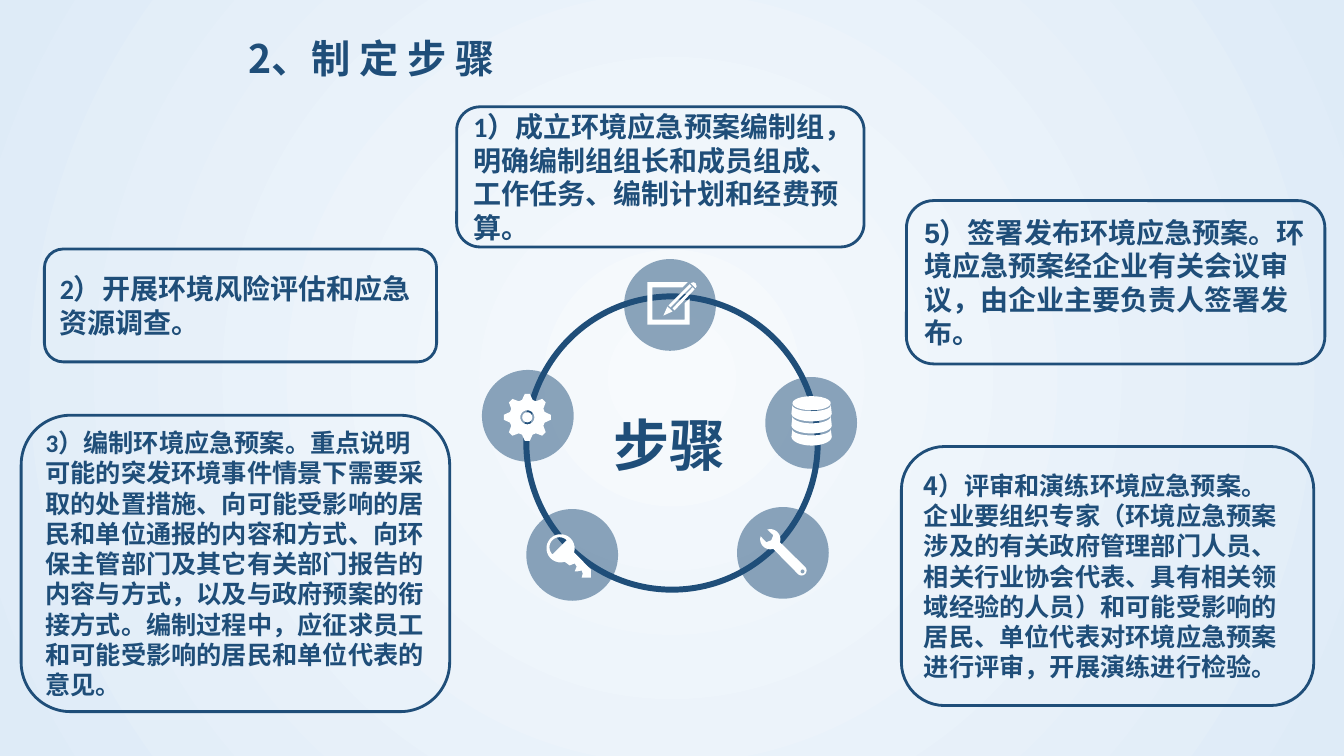
from dataclasses import dataclass
from math import cos, radians, sin

from lxml import etree
from pptx import Presentation
from pptx.dml.color import RGBColor
from pptx.enum.shapes import MSO_SHAPE as Preset
from pptx.enum.text import MSO_ANCHOR as Anchor, MSO_AUTO_SIZE as AutoSize, PP_ALIGN as Align
from pptx.oxml.ns import qn
from pptx.util import Inches, Pt

Point = tuple[float, float]
Contour = list[Point]

NAVY = "1F4E79"
ICON_WHITE = "FEFFFF"
CJK = "Noto Sans CJK SC"
DISC_SIZE = 0.91


@dataclass
class Step:
    text: str
    left: float
    top: float
    width: float
    height: float
    size: int
    font: str


@dataclass
class Badge:
    left: float
    top: float
    outlines: list[list[Contour]]


def arc(cx: float, cy: float, rx: float, ry: float, start: float, end: float) -> Contour:
    count = 24
    angles = [radians(start + (end - start) * i / count) for i in range(count + 1)]
    return [(cx + rx * cos(a), cy + ry * sin(a)) for a in angles]


def circle(cx: float, cy: float, radius: float) -> Contour:
    return arc(cx, cy, radius, radius, 0, 360)


def gear(cx: float, cy: float) -> Contour:
    tooth = [(0.18, -17), (0.235, -6), (0.235, 6), (0.18, 17)]
    return [
        (cx + r * cos(radians(turn + a)), cy + r * sin(radians(turn + a)))
        for turn in range(0, 360, 45)
        for r, a in tooth
    ]


def disk_layer(upper: float, lower: float, sag: float, depth: float) -> Contour:
    return arc(8.05, upper, 0.19, sag, 180, 0) + arc(8.05, lower, 0.2, depth, 0, 180)


PENCIL = [
    [[(6.67, 3.09), (6.62, 3.04), (6.58, 3.13)]],
    [[(6.84, 2.82), (6.63, 3.03), (6.65, 3.05), (6.86, 2.84)]],
    [[(6.67, 3.06), (6.69, 3.08), (6.89, 2.87), (6.87, 2.85)]],
    [[(6.85, 2.81), (6.88, 2.8), (6.9, 2.81), (6.91, 2.84), (6.9, 2.86)]],
    [[(6.79, 3.17), (6.47, 3.17), (6.47, 2.85), (6.77, 2.85), (6.82, 2.8), (6.42, 2.8),
      (6.42, 3.22), (6.84, 3.22), (6.84, 2.96), (6.79, 3.01)]],
]
GEAR = [[gear(5.23, 4.14), circle(5.23, 4.14, 0.07)], [circle(5.23, 4.14, 0.05)]]
DATABASE = [[
    disk_layer(4.26, 4.33, 0.06, 0.09),
    disk_layer(4.13, 4.22, 0.07, 0.08),
    disk_layer(4.02, 4.1, 0.06, 0.08),
    arc(8.05, 4, 0.19, 0.07, 0, 360),
]]
KEY = [[
    arc(5.56, 5.44, 0.14, 0.14, 73, 377)
    + [(5.86, 5.65), (5.86, 5.73), (5.77, 5.73), (5.78, 5.69), (5.77, 5.66), (5.72, 5.67),
       (5.7, 5.67), (5.72, 5.62), (5.7, 5.59), (5.65, 5.61)],
    arc(5.55, 5.43, 0.1, 0.1, 135, 315),
]]
WRENCH = [[
    arc(7.64, 5.35, 0.1, 0.1, 17, -107)
    + [(7.67, 5.31), (7.65, 5.36), (7.6, 5.38)]
    + arc(7.64, 5.35, 0.1, 0.1, 197, 73)
    + arc(7.95, 5.66, 0.05, 0.05, 135, -45),
    circle(7.96, 5.67, 0.02),
]]

BADGES = [
    Badge(6.19, 2.57, PENCIL),
    Badge(4.78, 3.67, GEAR),
    Badge(7.59, 3.74, DATABASE),
    Badge(5.22, 5.05, KEY),
    Badge(7.31, 5.03, WRENCH),
]

STEPS = [
    Step("4）评审和演练环境应急预案。企业要组织专家（环境应急预案涉及的有关政府管理部门人员、"
         "相关行业协会代表、具有相关领域经验的人员）和可能受影响的居民、单位代表对环境应急预案"
         "进行评审，开展演练进行检验。", 8.94, 4.43, 4.09, 2.57, 18, CJK),
    Step("5）签署发布环境应急预案。环境应急预案经企业有关会议审议，由企业主要负责人签署发布。",
         8.99, 1.99, 4.15, 1.62, 20, "Arial"),
    Step("3）编制环境应急预案。重点说明可能的突发环境事件情景下需要采取的处置措施、向可能受影响的"
         "居民和单位通报的内容和方式、向环保主管部门及其它有关部门报告的内容与方式，以及与政府预案的"
         "衔接方式。编制过程中，应征求员工和可能受影响的居民和单位代表的意见。",
         0.21, 4.12, 4.25, 2.94, 18, "Calibri"),
    Step("2）开展环境风险评估和应急资源调查。", 0.44, 2.47, 3.89, 1.12, 20, "Calibri"),
    Step("1）成立环境应急预案编制组，明确编制组组长和成员组成、工作任务、编制计划和经费预算。",
         4.53, 1.06, 4.04, 1.39, 20, "Calibri"),
]


def color(value: str) -> RGBColor:
    return RGBColor.from_string(value)


def paint_background(slide) -> None:
    fill = slide.background.fill
    fill.gradient()
    for stop, position, tone in zip(fill.gradient_stops, (0, 1), ("F7FAFD", "DEEBF7")):
        stop.position = position
        stop.color.rgb = color(tone)
    linear = slide.background._cSld.find(".//" + qn("a:lin"))
    radial = etree.Element(qn("a:path"), {"path": "circle"})
    etree.SubElement(radial, qn("a:fillToRect"), {side: "50000" for side in "ltrb"})
    linear.getparent().replace(linear, radial)


def write(shape, text: str, size: int, font: str) -> None:
    frame = shape.text_frame
    frame.word_wrap = True
    paragraph = frame.paragraphs[0]
    paragraph.text = text
    paragraph.alignment = Align.LEFT
    paragraph.font.size = Pt(size)
    paragraph.font.name = font
    paragraph.font.bold = True
    paragraph.font.color.rgb = color(NAVY)


def add_label(slide, text: str, left: float, top: float, width: float, height: float, size: int) -> None:
    label = slide.shapes.add_textbox(Inches(left), Inches(top), Inches(width), Inches(height))
    write(label, text, size, CJK)
    label.text_frame.auto_size = AutoSize.SHAPE_TO_FIT_TEXT


def add_outlined(slide, preset: Preset, left: float, top: float, width: float, height: float, weight: float):
    shape = slide.shapes.add_shape(preset, Inches(left), Inches(top), Inches(width), Inches(height))
    shape.shadow.inherit = False
    shape.fill.background()
    shape.line.color.rgb = color(NAVY)
    shape.line.width = Pt(weight)
    return shape


def fill_plain(shape, tone: str) -> None:
    shape.shadow.inherit = False
    shape.fill.solid()
    shape.fill.fore_color.rgb = color(tone)
    shape.line.fill.background()


def add_outline(slide, contours: list[Contour]) -> None:
    scaled = [[(Inches(x), Inches(y)) for x, y in contour] for contour in contours]
    builder = slide.shapes.build_freeform(*scaled[0][0])
    for index, contour in enumerate(scaled):
        if index:
            builder.move_to(*contour[0])
        builder.add_line_segments(contour[1:], close=True)
    fill_plain(builder.convert_to_shape(), ICON_WHITE)


def add_badge(slide, badge: Badge) -> None:
    disc = slide.shapes.add_shape(
        Preset.OVAL, Inches(badge.left), Inches(badge.top), Inches(DISC_SIZE), Inches(DISC_SIZE))
    fill_plain(disc, NAVY)
    tone = disc.fill._xPr.find(".//" + qn("a:srgbClr"))
    etree.SubElement(tone, qn("a:alpha"), {"val": "50000"})
    for contours in badge.outlines:
        add_outline(slide, contours)


def add_step(slide, step: Step) -> None:
    box = add_outlined(slide, Preset.ROUNDED_RECTANGLE, step.left, step.top, step.width, step.height, 2)
    write(box, step.text, step.size, step.font)
    box.text_frame.vertical_anchor = Anchor.MIDDLE


def main() -> None:
    deck = Presentation()
    deck.slide_width, deck.slide_height = Inches(13.33), Inches(7.5)
    slide = deck.slides.add_slide(deck.slide_layouts[6])
    paint_background(slide)
    add_label(slide, "2、制 定 步 骤", 2.37, 0.29, 4.11, 0.57, 28)
    add_outlined(slide, Preset.OVAL, 5.22, 2.94, 2.89, 2.91, 4.25)
    for badge in BADGES:
        add_badge(slide, badge)
    for step in STEPS:
        add_step(slide, step)
    add_label(slide, "步骤", 5.99, 4.02, 1.35, 0.77, 40)
    deck.save("out.pptx")


if __name__ == "__main__":
    main()
